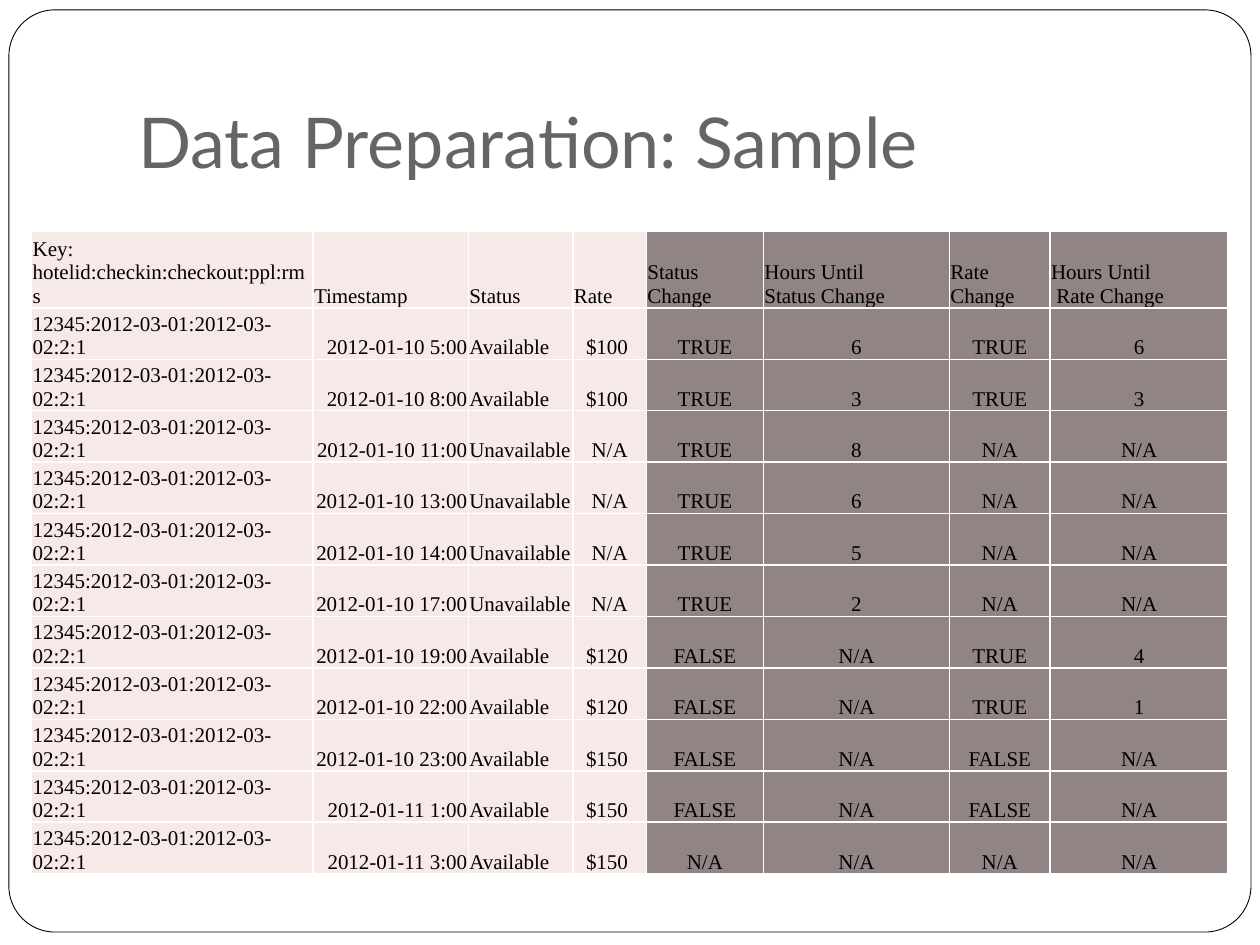
"""Build the data preparation sample slide."""
from lxml import etree
from pptx import Presentation
from pptx.dml.color import RGBColor
from pptx.enum.shapes import MSO_SHAPE
from pptx.enum.text import MSO_ANCHOR, PP_ALIGN
from pptx.oxml.ns import qn
from pptx.util import Cm, Pt

ROUNDED = MSO_SHAPE.ROUNDED_RECTANGLE
BOTTOM = MSO_ANCHOR.BOTTOM
LEFT, CENTER, RIGHT = PP_ALIGN.LEFT, PP_ALIGN.CENTER, PP_ALIGN.RIGHT

WHITE = RGBColor(0xFF, 0xFF, 0xFF)
BLACK = RGBColor(0x00, 0x00, 0x00)
GRAY = RGBColor(0x69, 0x64, 0x64)
PINK = RGBColor(0xF7, 0xE9, 0xE8)
TAUPE = RGBColor(0x91, 0x84, 0x85)

KEY = "12345:2012-03-01:2012-03-02:2:1"
HEADER = ["Key: hotelid:checkin:checkout:ppl:rms", "Timestamp", "Status", "Rate",
          "Status Change", "Hours Until\nStatus Change",
          "Rate Change", "Hours Until\n Rate Change"]
SAMPLES = [
    ("2012-01-10 5:00", "Available", "$100 ", "TRUE", "6", "TRUE", "6"),
    ("2012-01-10 8:00", "Available", "$100 ", "TRUE", "3", "TRUE", "3"),
    ("2012-01-10 11:00", "Unavailable", "N/A", "TRUE", "8", "N/A", "N/A"),
    ("2012-01-10 13:00", "Unavailable", "N/A", "TRUE", "6", "N/A", "N/A"),
    ("2012-01-10 14:00", "Unavailable", "N/A", "TRUE", "5", "N/A", "N/A"),
    ("2012-01-10 17:00", "Unavailable", "N/A", "TRUE", "2", "N/A", "N/A"),
    ("2012-01-10 19:00", "Available", "$120 ", "FALSE", "N/A", "TRUE", "4"),
    ("2012-01-10 22:00", "Available", "$120 ", "FALSE", "N/A", "TRUE", "1"),
    ("2012-01-10 23:00", "Available", "$150 ", "FALSE", "N/A", "FALSE", "N/A"),
    ("2012-01-11 1:00", "Available", "$150 ", "FALSE", "N/A", "FALSE", "N/A"),
    ("2012-01-11 3:00", "Available", "$150 ", "N/A", "N/A", "N/A", "N/A"),
]
COL_WIDTHS = [5.67, 3.13, 2.11, 1.48, 2.36, 3.75, 2.03, 3.59]
ALIGNS = [LEFT, RIGHT, LEFT] + [CENTER] * 5
FILLS = [PINK] * 4 + [TAUPE] * 4


class SlideBuilder:
    """Hold the text style and the current slide."""

    title_font, title_size = "Lato", 40
    body_font, body_size = "Times New Roman", 12

    def __init__(self, s):
        self.s = s

    def run(self, p, text, font, size, color):
        r = p.add_run()
        r.text = text
        r.font.name = font
        r.font.size = Pt(size)
        r.font.color.rgb = color

    def frame(self, x, y, w, h):
        sp = self.s.shapes.add_shape(ROUNDED, Cm(x), Cm(y), Cm(w), Cm(h))
        sp.adjustments[0] = 0.05
        sp.shadow.inherit = False
        sp.fill.solid()
        sp.fill.fore_color.rgb = WHITE
        sp.line.color.rgb = BLACK
        sp.line.width = Pt(0.5)

    def title(self, text, x, y, w, h):
        tf = self.s.shapes.add_textbox(Cm(x), Cm(y), Cm(w), Cm(h)).text_frame
        tf.word_wrap = True
        tf.vertical_anchor = BOTTOM
        tf.margin_bottom = Cm(0.25)
        self.run(tf.paragraphs[0], text, self.title_font, self.title_size, GRAY)

    def borders(self, cell):
        tc_pr = cell._tc.get_or_add_tcPr()
        for side in ("a:lnL", "a:lnR", "a:lnT", "a:lnB"):
            ln = etree.SubElement(tc_pr, qn(side), w=str(Pt(1)))
            fill = etree.SubElement(ln, qn("a:solidFill"))
            etree.SubElement(fill, qn("a:srgbClr"), val=str(WHITE))

    def cell(self, cell, text, align, fill):
        self.borders(cell)
        cell.fill.solid()
        cell.fill.fore_color.rgb = fill
        cell.vertical_anchor = BOTTOM
        cell.margin_left = cell.margin_right = cell.margin_top = Cm(0.02)
        cell.margin_bottom = 0
        tf = cell.text_frame
        for i, line in enumerate(text.split("\n")):
            p = tf.add_paragraph() if i else tf.paragraphs[0]
            p.alignment = align
            self.run(p, line, self.body_font, self.body_size, BLACK)

    def table(self, rows, x, y, header_height, row_height):
        height = header_height + row_height * (len(rows) - 1)
        table = self.s.shapes.add_table(len(rows), len(COL_WIDTHS), Cm(x), Cm(y),
                                        Cm(sum(COL_WIDTHS)), Cm(height)).table
        for col, width in zip(table.columns, COL_WIDTHS):
            col.width = Cm(width)
        for i, values in enumerate(rows):
            table.rows[i].height = Cm(row_height if i else header_height)
            for j, value in enumerate(values):
                self.cell(table.cell(i, j), value, ALIGNS[j] if i else LEFT, FILLS[j])


def main():
    prs = Presentation()
    prs.slide_width, prs.slide_height = Cm(25.4), Cm(19.05)
    b = SlideBuilder(prs.slides.add_slide(prs.slide_layouts[6]))
    b.frame(0.18, 0.2, 25.04, 18.59)
    b.title("Data Preparation: Sample", 2.54, 0.74, 21.59, 3.18)
    b.table([HEADER] + [(KEY, *sample) for sample in SAMPLES], 0.64, 4.66, 1.41, 1)
    prs.save("out.pptx")


if __name__ == "__main__":
    main()
